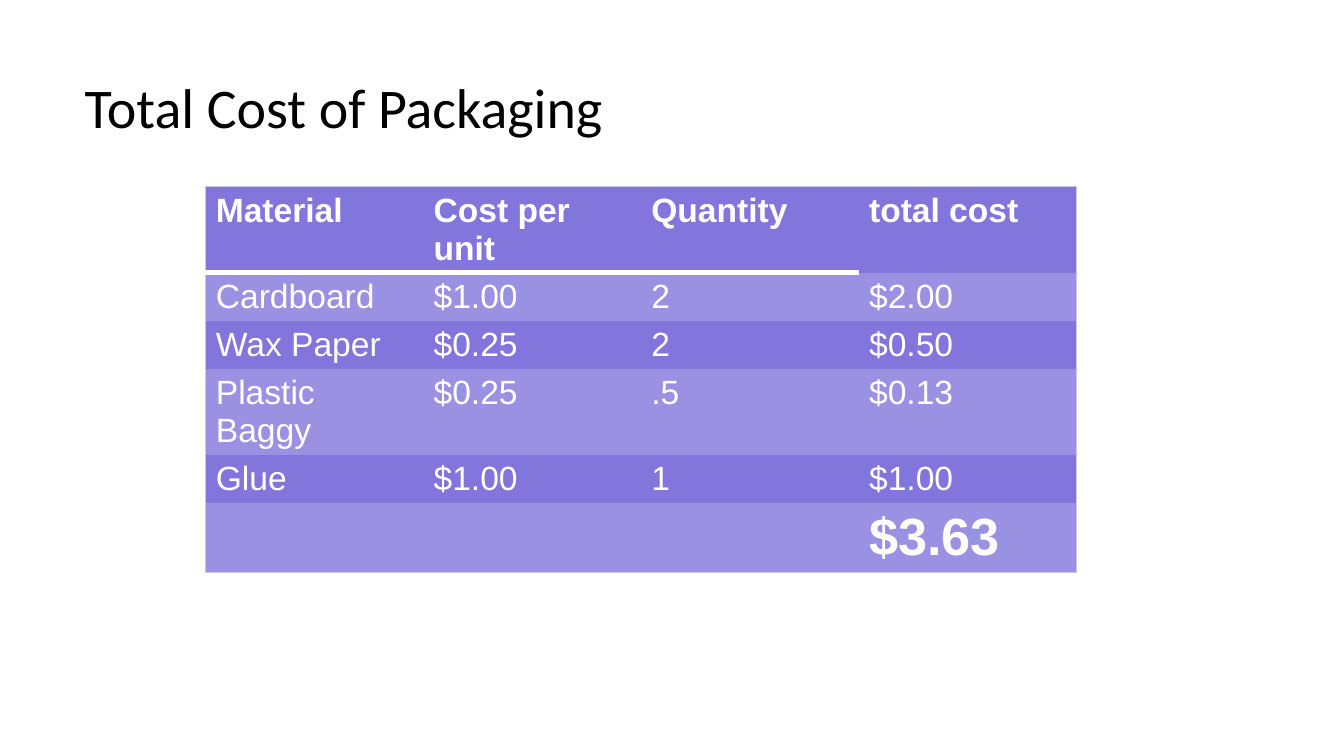
"""Build the packaging cost slide: a title above a banded cost table."""
import dataclasses

import lxml.etree
import pptx
import pptx.dml.color
import pptx.enum.text
import pptx.oxml.ns
import pptx.util

Cm = pptx.util.Cm
Pt = pptx.util.Pt
RGB = pptx.dml.color.RGBColor.from_string
qn = pptx.oxml.ns.qn


@dataclasses.dataclass(frozen=True)
class Theme:
    title_font: str = "Calibri"
    body_font: str = "Arial"
    title_color: str = "000000"
    text_color: str = "FFFFFF"
    row_color: str = "8275DC"
    band_color: str = "9B91E3"
    edge_color: str = "CBC8E6"
    title_size: int = 30
    body_size: int = 18
    total_size: int = 28
    edge_width: float = 0.75
    header_rule: float = 3
    plain_table: str = "{2D5ABB26-0587-4C30-8999-92F81FD0307C}"


THEME = Theme()

ROWS = [
    ["Material", "Cost per unit", "Quantity", "total cost"],
    ["Cardboard", "$1.00", "2", "$2.00"],
    ["Wax Paper", "$0.25", "2", "$0.50"],
    ["Plastic Baggy", "$0.25", ".5", "$0.13"],
    ["Glue", "$1.00", "1", "$1.00"],
    ["", "", "", "$3.63"],
]


def add_run(p, text, font, size, color, bold=False):
    r = p.add_run()
    r.text = text
    r.font.name = font
    r.font.size = Pt(size)
    r.font.bold = bold
    r.font.color.rgb = RGB(color)


def add_title(s, text):
    sp = s.shapes.title
    sp.left, sp.top, sp.width, sp.height = Cm(1.42), Cm(1.27), Cm(17.91), Cm(2.74)
    tf = sp.text_frame
    tf.auto_size = pptx.enum.text.MSO_AUTO_SIZE.NONE
    tf.vertical_anchor = pptx.enum.text.MSO_ANCHOR.TOP
    tf.margin_left = tf.margin_right = Cm(0.18)
    tf.margin_top = tf.margin_bottom = Cm(0.1)
    p = tf.paragraphs[0]
    p.alignment = pptx.enum.text.PP_ALIGN.LEFT
    add_run(p, text, THEME.title_font, THEME.title_size, THEME.title_color)


def add_border(cell, side, color, width):
    tc_pr = cell._tc.get_or_add_tcPr()
    ln = lxml.etree.SubElement(tc_pr, qn(f"a:ln{side}"), w=str(Pt(width)))
    fill = lxml.etree.SubElement(ln, qn("a:solidFill"))
    lxml.etree.SubElement(fill, qn("a:srgbClr"), val=color)


def add_borders(cell, row, col):
    last_row, last_col = len(ROWS) - 1, len(ROWS[0]) - 1
    edges = {"L": col == 0, "R": col == last_col, "T": row == 0, "B": row == last_row}
    for side, outer in edges.items():
        if outer:
            add_border(cell, side, THEME.edge_color, THEME.edge_width)
    if row == 0 and col < last_col:
        add_border(cell, "B", THEME.text_color, THEME.header_rule)


def fill_cell(cell, text, row, col):
    add_borders(cell, row, col)
    cell.fill.solid()
    cell.fill.fore_color.rgb = RGB(THEME.band_color if row % 2 else THEME.row_color)
    cell.margin_left = cell.margin_right = Cm(0.19)
    cell.margin_top = cell.margin_bottom = Cm(0.1)
    if text:
        is_total = row == len(ROWS) - 1
        size = THEME.total_size if is_total else THEME.body_size
        add_run(cell.text_frame.paragraphs[0], text, THEME.body_font, size,
                THEME.text_color, bold=is_total or row == 0)


def add_cost_table(s):
    frame = s.shapes.add_table(len(ROWS), len(ROWS[0]),
                               Cm(3.89), Cm(3.53), Cm(16.46), Cm(7.67))
    table = frame.table
    table._tbl.tblPr.find(qn("a:tableStyleId")).text = THEME.plain_table
    for table_row in table.rows:
        table_row.height = Cm(0.86)
    for row, texts in enumerate(ROWS):
        for col, text in enumerate(texts):
            fill_cell(table.cell(row, col), text, row, col)
    table.cell(len(ROWS) - 1, 0).merge(table.cell(len(ROWS) - 1, 2))
    frame.height = Cm(7.67)


def main():
    prs = pptx.Presentation()
    prs.slide_width, prs.slide_height = Cm(25.4), Cm(14.29)
    s = prs.slides.add_slide(prs.slide_layouts[5])
    add_title(s, "Total Cost of Packaging")
    add_cost_table(s)
    prs.save("out.pptx")


if __name__ == "__main__":
    main()
